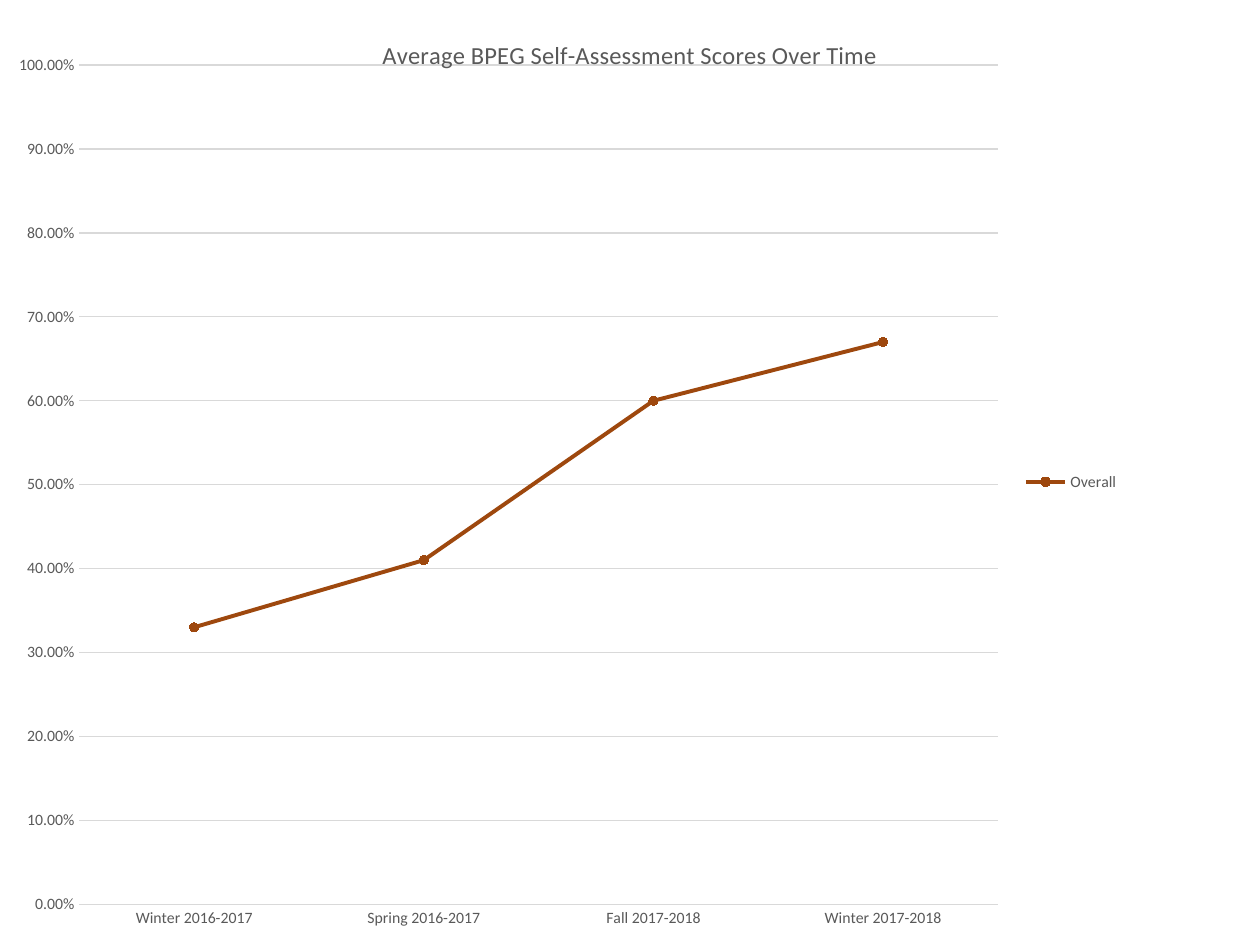
from lxml.etree import SubElement
from pptx import Presentation
from pptx.chart.data import CategoryChartData
from pptx.dml.color import RGBColor
from pptx.enum.chart import XL_CHART_TYPE as ChartType
from pptx.enum.chart import XL_LEGEND_POSITION as LegendPos
from pptx.enum.chart import XL_MARKER_STYLE as Marker
from pptx.enum.chart import XL_TICK_MARK as Tick
from pptx.oxml.ns import qn
from pptx.util import Cm, Pt

WIDTH, HEIGHT = 25.4, 19.05
TITLE = "Average BPEG Self-Assessment Scores Over Time"
TERMS = ["Winter 2016-2017", "Spring 2016-2017", "Fall 2017-2018", "Winter 2017-2018"]
SCORES = [0.33, 0.41, 0.6, 0.67]


def rgb(value):
    return RGBColor.from_string(value)


def place(parent, after, inner=False, **fractions):
    """Give a chart part a manual layout, in fractions of the chart."""
    for old in parent.findall(qn("c:layout")):
        parent.remove(old)
    layout = SubElement(parent, qn("c:layout"))
    manual = SubElement(layout, qn("c:manualLayout"))
    if inner:
        SubElement(manual, qn("c:layoutTarget")).set("val", "inner")
    for side in ("x", "y"):
        SubElement(manual, qn(f"c:{side}Mode")).set("val", "edge")
    for name, value in fractions.items():
        SubElement(manual, qn(f"c:{name}")).set("val", str(value))
    if after is None:
        parent.insert(0, layout)
    else:
        after.addnext(layout)


class Deck:
    font, text, grid, accent = "Calibri", "595959", "D9D9D9", "9E480E"

    def __init__(self):
        self.prs = Presentation()
        self.prs.slide_width, self.prs.slide_height = Cm(WIDTH), Cm(HEIGHT)

    def add_slide(self):
        self.s = self.prs.slides.add_slide(self.prs.slide_layouts[6])

    def style_font(self, font, size):
        font.name, font.size, font.bold = self.font, Pt(size), False
        font.color.rgb = rgb(self.text)

    def style_line(self, line, color, width):
        line.color.rgb = rgb(color)
        line.width = Pt(width)

    def line_chart(self, title, cats, name, values):
        data = CategoryChartData(number_format="0.00%")
        data.categories = cats
        data.add_series(name, values)
        chart = self.s.shapes.add_chart(
            ChartType.LINE_MARKERS, 0, 0, Cm(WIDTH), Cm(HEIGHT), data).chart
        self.style_font(chart.font, 10)
        chart.plots[0].vary_by_categories = False
        place(chart.plots[0]._element.getparent(), None, inner=True,
              x=0.063, y=0.069, w=0.729, h=0.888)
        self.title(chart, title)
        self.axes(chart)
        self.series(chart.plots[0].series[0])
        self.legend(chart)

    def title(self, chart, text):
        chart.has_title = True
        tf = chart.chart_title.text_frame
        tf.text = text
        self.style_font(tf.paragraphs[0].font, 14)
        el = chart.chart_title._element
        place(el, el.find(qn("c:tx")), x=0.3, y=0.035)

    def axes(self, chart):
        for axis in (chart.category_axis, chart.value_axis):
            axis.major_tick_mark = axis.minor_tick_mark = Tick.NONE
            self.style_font(axis.tick_labels.font, 9)
        self.style_line(chart.category_axis.format.line, self.grid, 0.75)
        scale = chart.value_axis
        scale.minimum_scale, scale.maximum_scale, scale.major_unit = 0, 1, 0.1
        scale.tick_labels.number_format = "0.00%"
        scale.tick_labels.number_format_is_linked = False
        scale.format.line.fill.background()
        self.style_line(scale.major_gridlines.format.line, self.grid, 0.75)

    def series(self, ser):
        ser.smooth = False
        self.style_line(ser.format.line, self.accent, 2.25)
        ser.marker.style, ser.marker.size = Marker.CIRCLE, 5
        ser.marker.format.fill.solid()
        ser.marker.format.fill.fore_color.rgb = rgb(self.accent)
        self.style_line(ser.marker.format.line, self.accent, 0.75)

    def legend(self, chart):
        chart.has_legend = True
        legend = chart.legend
        legend.position = LegendPos.RIGHT
        legend.include_in_layout = False
        self.style_font(legend.font, 9)
        el = legend._element
        place(el, el.find(qn("c:legendPos")), x=0.8, y=0.49, w=0.1, h=0.04)


def main():
    deck = Deck()
    deck.add_slide()
    # Scores by term, filling the slide
    deck.line_chart(TITLE, TERMS, "Overall", SCORES)
    deck.prs.save("out.pptx")


if __name__ == "__main__":
    main()
